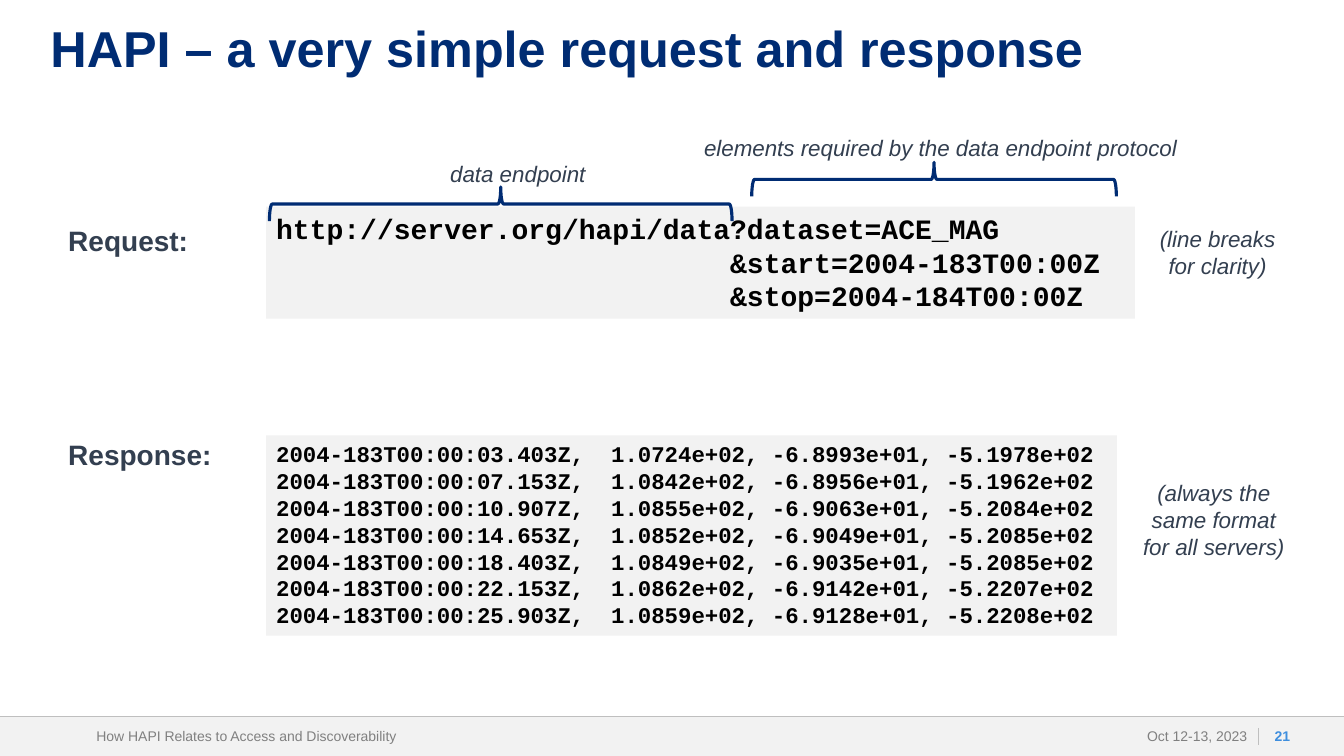
import pptx
import pptx.dml.color
import pptx.enum.shapes
import pptx.enum.text
import pptx.oxml
import pptx.util
from pptx.util import Cm, Pt

ALIGN = pptx.enum.text.PP_ALIGN
ANCHOR = pptx.enum.text.MSO_ANCHOR
SHAPE = pptx.enum.shapes.MSO_SHAPE

THEME = {
    "navy": pptx.dml.color.RGBColor.from_string("002C73"),
    "panel": pptx.dml.color.RGBColor.from_string("F2F2F2"),
    "rule": pptx.dml.color.RGBColor.from_string("BFBFBF"),
    "title": {"size": Pt(36), "name": "Arial", "bold": True, "color": "002C73"},
    "label": {"size": Pt(20), "name": "Arial", "bold": True, "color": "333F50"},
    "note": {"size": Pt(16), "name": "Arial", "italic": True, "color": "333F50"},
    "request": {"size": Pt(20), "name": "Courier New", "bold": True, "color": "000000"},
    "response": {"size": Pt(16), "name": "Courier New", "bold": True, "color": "000000"},
    "footer": {"size": Pt(10), "name": "Arial", "color": "808080"},
    "number": {"size": Pt(10), "name": "Arial", "bold": True, "color": "3E8EDE"},
}


def write(shape, lines, style, align=ALIGN.LEFT, wrap=False, anchor=ANCHOR.TOP, inset=None):
    """Fill a shape with one paragraph per line; inset is (side, top and bottom) in cm."""
    frame = shape.text_frame
    frame.auto_size = pptx.enum.text.MSO_AUTO_SIZE.NONE
    frame.word_wrap = wrap
    frame.vertical_anchor = anchor
    if inset:
        frame.margin_left = frame.margin_right = Cm(inset[0])
        frame.margin_top = frame.margin_bottom = Cm(inset[1])
    frame.text = "\n".join(lines)
    for paragraph in frame.paragraphs:
        paragraph.alignment = align
        for run in paragraph.runs:
            for name, value in THEME[style].items():
                if name == "color":
                    run.font.color.rgb = pptx.dml.color.RGBColor.from_string(value)
                else:
                    setattr(run.font, name, value)


presentation = pptx.Presentation()
presentation.slide_width = Cm(33.87)
presentation.slide_height = Cm(19.05)
slide = presentation.slides.add_slide(presentation.slide_layouts[5])
shapes = slide.shapes

# Footer band with its rules
FOOTER_TOP, FOOTER_HEIGHT = 18.06, 0.99
band = shapes.add_shape(SHAPE.RECTANGLE, 0, Cm(FOOTER_TOP), Cm(33.87), Cm(FOOTER_HEIGHT))
band.shadow.inherit = False
band.fill.solid()
band.fill.fore_color.rgb = THEME["panel"]
band.line.fill.background()

for ends in [(0, FOOTER_TOP, 33.87, FOOTER_TOP), (31.72, 18.34, 31.72, 18.77)]:
    rule = shapes.add_connector(
        pptx.enum.shapes.MSO_CONNECTOR.STRAIGHT, *[Cm(value) for value in ends])
    rule.line.color.rgb = THEME["rule"]
    rule.line.width = Pt(0.5)
    rule._element.spPr.append(pptx.oxml.parse_xml(
        '<a:effectLst xmlns:a="http://schemas.openxmlformats.org/drawingml/2006/main"/>'))

for left, width, text, style, align, side in [
    (2.18, 8.89, "How HAPI Relates to Access and Discoverability", "footer", ALIGN.LEFT, 0.25),
    (23.55, 8.13, "Oct 12-13, 2023", "footer", ALIGN.RIGHT, 0.25),
    (31.78, 1.07, "21", "number", ALIGN.CENTER, 0),
]:
    box = shapes.add_textbox(Cm(left), Cm(FOOTER_TOP), Cm(width), Cm(FOOTER_HEIGHT))
    write(box, [text], style, align, True, ANCHOR.MIDDLE, (side, 0))

# Title
title = shapes.title
title.left, title.top, title.width, title.height = Cm(1.27), Cm(0.61), Cm(31.32), Cm(2.11)
write(title, ["HAPI – a very simple request and response"], "title", wrap=True, inset=(0, 0))
title.text_frame.paragraphs[0].line_spacing = 0.9

# Code panels
request_lines = [
    "http://server.org/hapi/data?dataset=ACE_MAG",
    "                           &start=2004-183T00:00Z",
    "                           &stop=2004-184T00:00Z",
]
response_lines = [
    "2004-183T00:00:03.403Z,  1.0724e+02, -6.8993e+01, -5.1978e+02",
    "2004-183T00:00:07.153Z,  1.0842e+02, -6.8956e+01, -5.1962e+02",
    "2004-183T00:00:10.907Z,  1.0855e+02, -6.9063e+01, -5.2084e+02",
    "2004-183T00:00:14.653Z,  1.0852e+02, -6.9049e+01, -5.2085e+02",
    "2004-183T00:00:18.403Z,  1.0849e+02, -6.9035e+01, -5.2085e+02",
    "2004-183T00:00:22.153Z,  1.0862e+02, -6.9142e+01, -5.2207e+02",
    "2004-183T00:00:25.903Z,  1.0859e+02, -6.9128e+01, -5.2208e+02",
]
for top, width, height, lines, style, wrap in [
    (5.21, 21.89, 2.82, request_lines, "request", True),
    (10.97, 21.44, 5.05, response_lines, "response", False),
]:
    panel = shapes.add_shape(SHAPE.RECTANGLE, Cm(6.71), Cm(top), Cm(width), Cm(height))
    panel.shadow.inherit = False
    panel.fill.solid()
    panel.fill.fore_color.rgb = THEME["panel"]
    panel.line.fill.background()
    write(panel, lines, style, wrap=wrap)

# Labels and notes
for left, top, width, height, lines, style, align in [
    (1.47, 5.51, 3.56, 1.12, ["Request:"], "label", ALIGN.LEFT),
    (1.47, 10.9, 4.17, 1.12, ["Response:"], "label", ALIGN.LEFT),
    (28.96, 5.56, 3.45, 1.63, ["(line breaks", "for clarity)"], "note", ALIGN.CENTER),
    (28.52, 11.96, 4.14, 2.31, ["(always the", "same format", "for all servers)"],
     "note", ALIGN.CENTER),
    (11.07, 3.91, 3.96, 0.94, ["data endpoint"], "note", ALIGN.CENTER),
    (17.42, 3.25, 12.57, 0.94, ["elements required by the data endpoint protocol"],
     "note", ALIGN.CENTER),
]:
    box = shapes.add_textbox(Cm(left), Cm(top), Cm(width), Cm(height))
    write(box, lines, style, align)

# Braces over the two parts of the request, turned to point up
BRACE_DEPTH = 0.86
for center_x, center_y, span in [(12.62, 5.14, 11.66), (23.54, 4.52, 9.19)]:
    brace = shapes.add_shape(
        SHAPE.RIGHT_BRACE, Cm(center_x - BRACE_DEPTH / 2), Cm(center_y - span / 2),
        Cm(BRACE_DEPTH), Cm(span))
    brace.rotation = 270
    brace.shadow.inherit = False
    brace.fill.background()
    brace.line.color.rgb = THEME["navy"]
    brace.line.width = Pt(2.25)

presentation.save("out.pptx")
